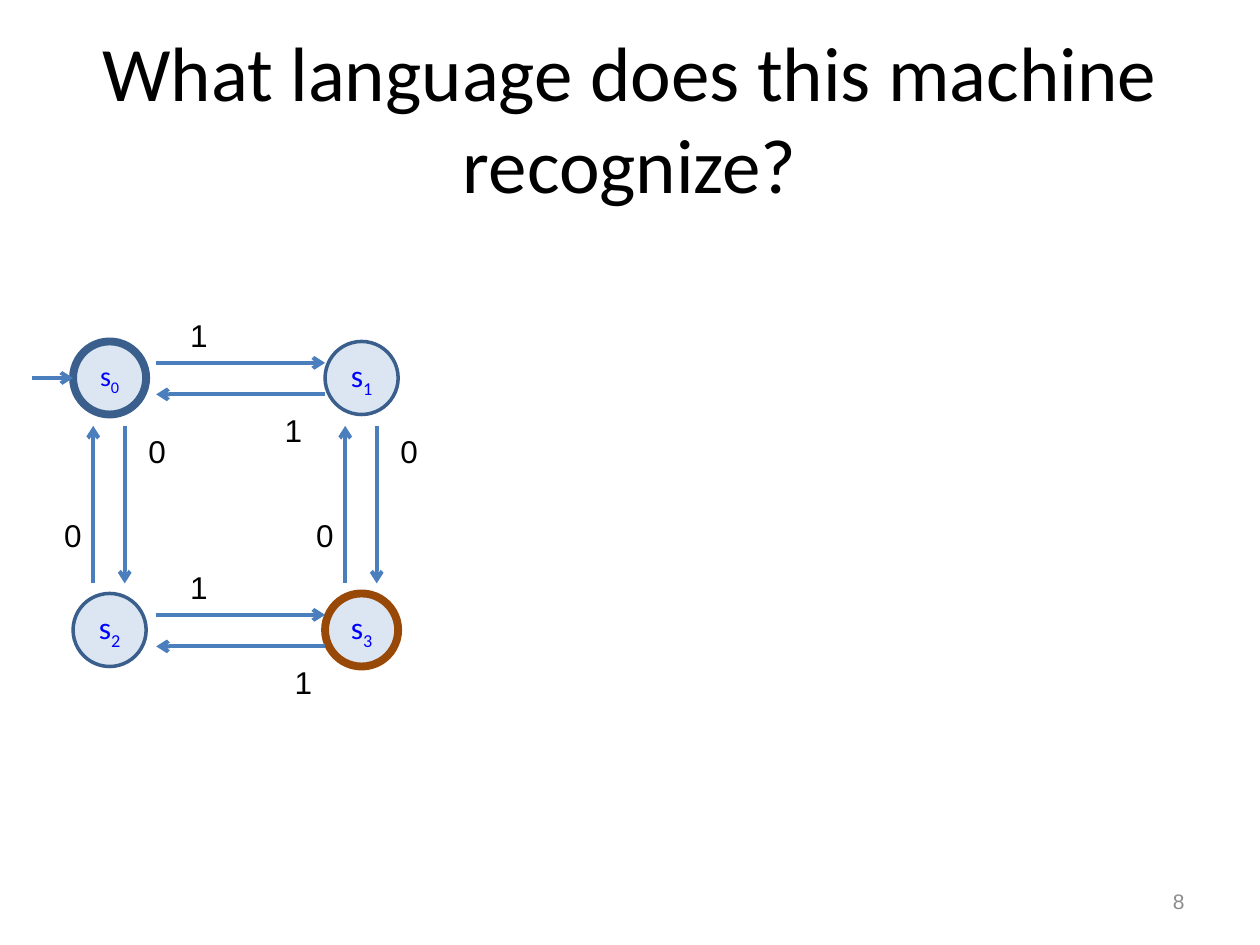
from dataclasses import dataclass

from lxml import etree
from pptx import Presentation
from pptx.dml.color import RGBColor
from pptx.enum import shapes, text
from pptx.oxml import ns
from pptx.util import Inches, Pt

HUES = {
    "black": "000000",
    "gray": "8C8C8C",
    "blue": "0000FF",
    "pale": "DCE6F2",
    "edge": "3A5F8C",
    "final": "984807",
    "arrow": "4B7EBC",
}
LEFT, TOP, STEP, SIZE = 0.58, 2.71, 2, 0.58


@dataclass
class State:
    num: str
    col: int
    row: int
    edge: str = "edge"
    width: float = 2
    size: int = 18


@dataclass
class Arrow:
    x1: float
    y1: float
    x2: float
    y2: float
    back: bool = False


@dataclass
class Label:
    x: float
    y: float
    word: str


def hue(name: str) -> RGBColor:
    return RGBColor.from_string(HUES[name])


def add_run(para, word: str, size: float, color: str, face: str = "Arial"):
    run = para.add_run()
    run.text = word
    run.font.size = Pt(size)
    run.font.name = face
    run.font.color.rgb = hue(color)
    return run


def draw_state(slide, state: State) -> None:
    x, y = LEFT + state.col * STEP, TOP + state.row * STEP
    disc = slide.shapes.add_shape(
        shapes.MSO_SHAPE.OVAL, Inches(x), Inches(y), Inches(SIZE), Inches(SIZE))
    disc.shadow.inherit = False
    disc.fill.solid()
    disc.fill.fore_color.rgb = hue("pale")
    disc.line.color.rgb = hue(state.edge)
    disc.line.width = Pt(state.width)
    frame = disc.text_frame
    frame.vertical_anchor = text.MSO_ANCHOR.MIDDLE
    para = frame.paragraphs[0]
    para.alignment = text.PP_ALIGN.CENTER
    add_run(para, "s", state.size, "blue", "Calibri")
    sub = add_run(para, state.num, state.size, "blue", "Calibri")
    sub.font._element.set("baseline", "-25000")


def draw_arrow(slide, arrow: Arrow) -> None:
    line = slide.shapes.add_connector(
        shapes.MSO_CONNECTOR.STRAIGHT, Inches(arrow.x1), Inches(arrow.y1),
        Inches(arrow.x2), Inches(arrow.y2))
    line.line.color.rgb = hue("arrow")
    line.line.width = Pt(2.25)
    end = "a:headEnd" if arrow.back else "a:tailEnd"
    etree.SubElement(line.line._get_or_add_ln(), ns.qn(end), type="arrow")
    etree.SubElement(line._element.spPr, ns.qn("a:effectLst"))


def draw_label(slide, label: Label) -> None:
    box = slide.shapes.add_textbox(
        Inches(label.x), Inches(label.y), Inches(0.25), Inches(0.4))
    box.text_frame.word_wrap = True
    box.text_frame.auto_size = text.MSO_AUTO_SIZE.SHAPE_TO_FIT_TEXT
    add_run(box.text_frame.paragraphs[0], label.word, 18, "black")


def draw_title(slide) -> None:
    title = slide.shapes.title
    title.left, title.top = Inches(0.5), Inches(0.3)
    title.width, title.height = Inches(9), Inches(1.25)
    frame = title.text_frame
    frame.word_wrap = True
    frame.auto_size = text.MSO_AUTO_SIZE.NONE
    frame.vertical_anchor = text.MSO_ANCHOR.MIDDLE
    para = frame.paragraphs[0]
    para.alignment = text.PP_ALIGN.CENTER
    add_run(para, "What language does this machine recognize?", 44, "black", "Calibri")


def draw_number(slide) -> None:
    box = slide.shapes.add_textbox(
        Inches(7.17), Inches(6.95), Inches(2.33), Inches(0.4))
    box.text_frame.word_wrap = True
    box.text_frame.vertical_anchor = text.MSO_ANCHOR.MIDDLE
    para = box.text_frame.paragraphs[0]
    para.alignment = text.PP_ALIGN.RIGHT
    add_run(para, "8", 12, "gray")


def main() -> None:
    deck = Presentation()
    deck.slide_width, deck.slide_height = Inches(10), Inches(7.5)
    slide = deck.slides.add_slide(deck.slide_layouts[5])
    draw_title(slide)
    draw_number(slide)

    # States on a two by two grid
    states = [
        State("0", 0, 0, width=4.5, size=16),
        State("2", 0, 1),
        State("3", 1, 1, edge="final", width=4.5),
        State("1", 1, 0),
    ]
    for state in states:
        draw_state(slide, state)

    # Moves on 1 run along the rows; the lower label shifts by row
    arrows, labels = [], []
    for dy, low in ((0, 2.16), (STEP, 2.24)):
        arrows += [Arrow(1.24, 2.88 + dy, 2.58, 2.88 + dy),
                   Arrow(1.24, 3.13 + dy, 2.58, 3.13 + dy, back=True)]
        labels += [Label(1.41, 2.46 + dy, "1"), Label(low, 3.21 + dy, "1")]

    # Moves on 0 run along the columns
    for dx in (STEP, 0):
        arrows += [Arrow(0.99 + dx, 3.38, 0.99 + dx, 4.63),
                   Arrow(0.74 + dx, 3.38, 0.74 + dx, 4.63, back=True)]
        labels += [Label(1.08 + dx, 3.38, "0"), Label(0.41 + dx, 4.05, "0")]

    # Entry into the start state
    arrows.append(Arrow(0.25, 3, LEFT, 3))

    for arrow in arrows:
        draw_arrow(slide, arrow)
    for label in labels:
        draw_label(slide, label)
    deck.save("out.pptx")


if __name__ == "__main__":
    main()
